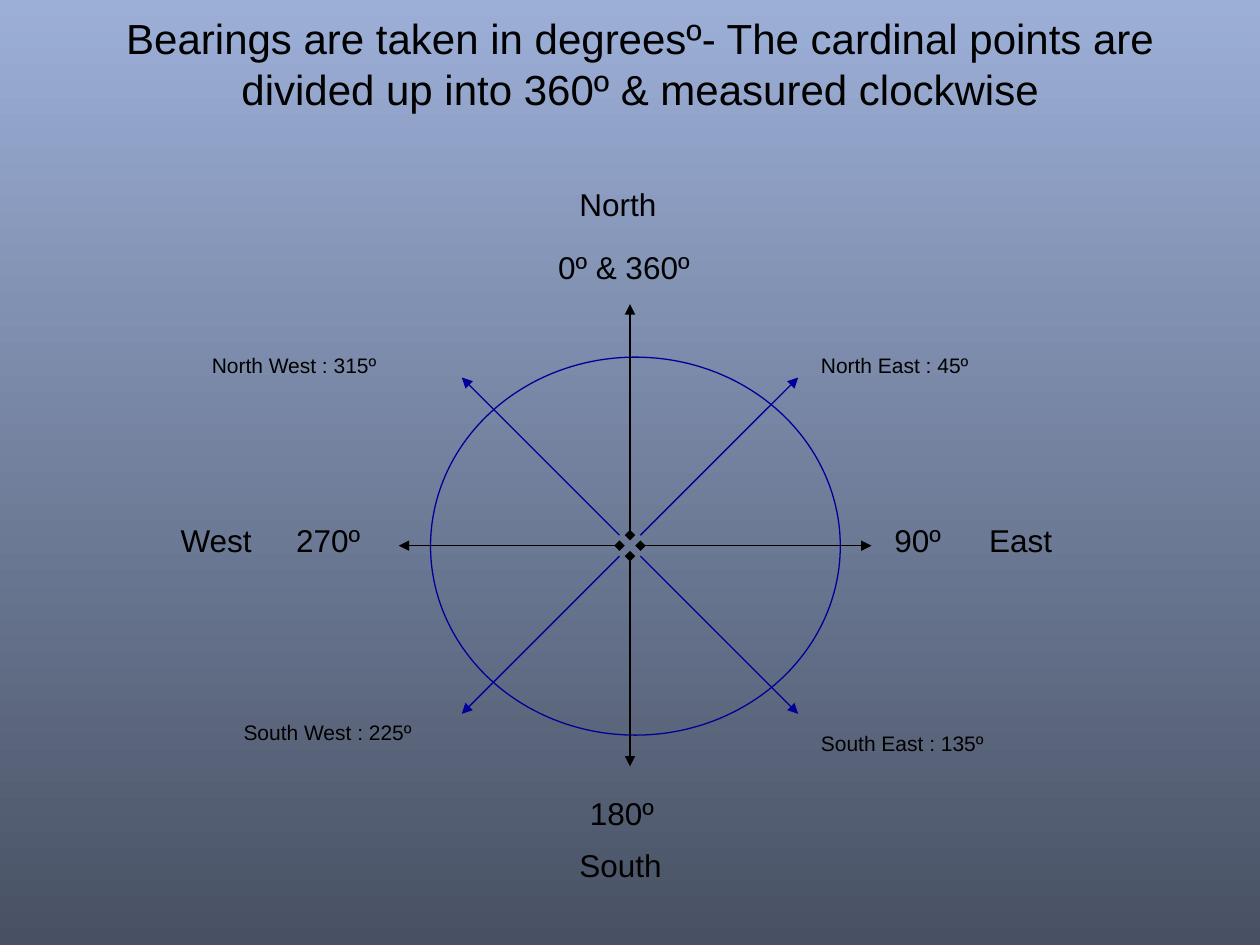
import pptx
import pptx.util
import pptx.dml.color
import pptx.enum.dml
import pptx.enum.shapes
import pptx.enum.text
import pptx.oxml.ns
import lxml.etree
from pptx.util import Cm

TITLE = "Bearings are taken in degreesº- The cardinal points are divided up into 360º & measured clockwise"

LABELS = [
    ("North", 11.43, 3.61, 2.75, "large"),
    ("0º & 360º", 11.0, 4.88, 3.81, "large"),
    ("West", 3.39, 10.37, 2.75, "large"),
    ("270º", 5.72, 10.37, 2.12, "large"),
    ("90º", 17.78, 10.37, 2.12, "large"),
    ("East", 19.69, 10.37, 2.75, "large"),
    ("180º", 11.64, 15.88, 2.12, "large"),
    ("South", 11.43, 16.93, 2.75, "large"),
    ("North West : 315º", 4.02, 6.99, 4.87, "small"),
    ("North East : 45º", 16.3, 6.99, 5.08, "small"),
    ("South West : 225º", 4.66, 14.39, 5.08, "small"),
    ("South East : 135º", 16.3, 14.61, 4.66, "small"),
]

CENTRE_X, CENTRE_Y, GAP = 12.7, 11.0, 0.21
CARDINALS = [(0, -1, 4.87), (1, 0, 4.87), (0, 1, 4.45), (-1, 0, 4.66)]
DIAGONALS = [(1, -1, 3.39), (1, 1, 3.39), (-1, 1, 3.39), (-1, -1, 3.39)]

THEME = {
    "font": "Arial",
    "title": 24, "large": 18, "small": 12,
    "ink": "000000", "blue": "000099",
    "sky": "9CAFD7", "slate": "485163",
    "line": 0.75,
}


def color(name):
    return pptx.dml.color.RGBColor.from_string(THEME[name])


def write(box, text, size="large", align=pptx.enum.text.PP_ALIGN.LEFT,
          anchor=pptx.enum.text.MSO_ANCHOR.TOP,
          fit=pptx.enum.text.MSO_AUTO_SIZE.SHAPE_TO_FIT_TEXT):
    frame = box.text_frame
    frame.word_wrap = True
    frame.auto_size = fit
    frame.vertical_anchor = anchor
    para = frame.paragraphs[0]
    para.alignment = align
    span = para.add_run()
    span.text = text
    span.font.name = THEME["font"]
    span.font.size = pptx.util.Pt(THEME[size])
    span.font.color.rgb = color(ink := "ink")


def draw_arrow(page, direction, ink, start=None):
    step_x, step_y, reach = direction
    arrow = page.shapes.add_connector(
        pptx.enum.shapes.MSO_CONNECTOR.STRAIGHT,
        Cm(CENTRE_X + step_x * GAP), Cm(CENTRE_Y + step_y * GAP),
        Cm(CENTRE_X + step_x * reach), Cm(CENTRE_Y + step_y * reach))
    arrow.line.color.rgb = color(ink)
    arrow.line.width = pptx.util.Pt(THEME["line"])
    line = arrow.line._get_or_add_ln()
    for end, kind in (("a:headEnd", start), ("a:tailEnd", "triangle")):
        if kind:
            lxml.etree.SubElement(line, pptx.oxml.ns.qn(end), type=kind)
    lxml.etree.SubElement(arrow._element.spPr, pptx.oxml.ns.qn("a:effectLst"))


def paint_background(page):
    fill = page.background.fill
    fill.gradient()
    fill.gradient_angle = 270
    for stop, name, position in zip(fill.gradient_stops, ("sky", "slate"), (0, 1)):
        stop.color.rgb = color(name)
        stop.position = position


def draw_circle(page):
    circle = page.shapes.add_shape(
        pptx.enum.shapes.MSO_SHAPE.OVAL, Cm(8.68), Cm(7.2), Cm(8.26), Cm(7.62))
    circle.shadow.inherit = False
    circle.fill.background()
    circle.line.color.rgb = color("blue")
    circle.line.width = pptx.util.Pt(THEME["line"])


def main():
    deck = pptx.Presentation()
    deck.slide_width, deck.slide_height = Cm(25.4), Cm(19.05)
    page = deck.slides.add_slide(deck.slide_layouts[5])
    paint_background(page)

    title = page.shapes.title
    title.left, title.top, title.width, title.height = Cm(2.11), Cm(0), Cm(21.59), Cm(2.54)
    write(title, TITLE, size="title", align=pptx.enum.text.PP_ALIGN.CENTER,
          anchor=pptx.enum.text.MSO_ANCHOR.MIDDLE, fit=pptx.enum.text.MSO_AUTO_SIZE.NONE)

    draw_circle(page)
    for direction in CARDINALS:
        draw_arrow(page, direction, "ink", start="diamond")
    for direction in DIAGONALS:
        draw_arrow(page, direction, "blue")

    for text, left, top, width, size in LABELS:
        height = 1.09 if size == "large" else 0.76
        box = page.shapes.add_textbox(Cm(left), Cm(top), Cm(width), Cm(height))
        write(box, text, size=size)

    deck.save("out.pptx")


if __name__ == "__main__":
    main()
